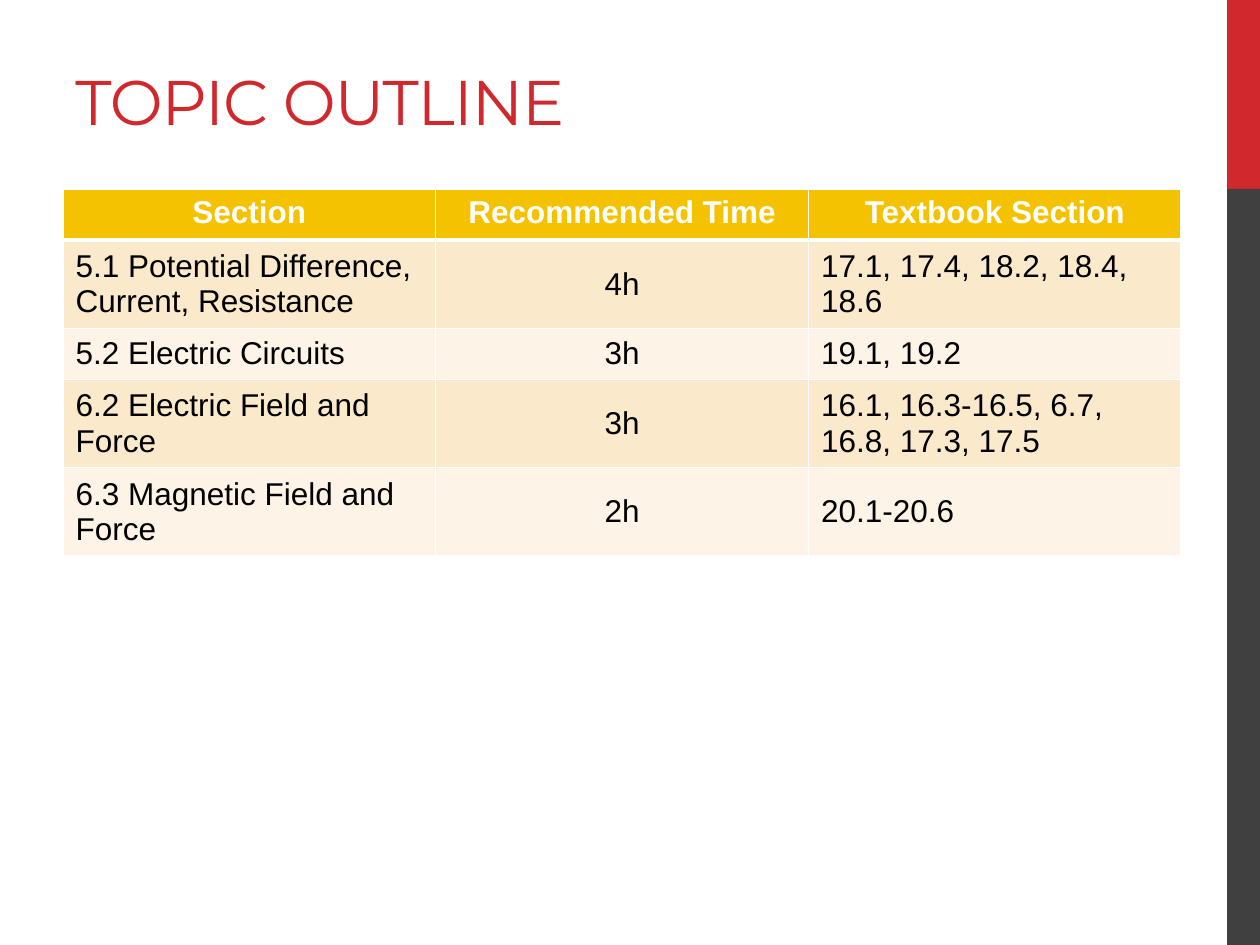
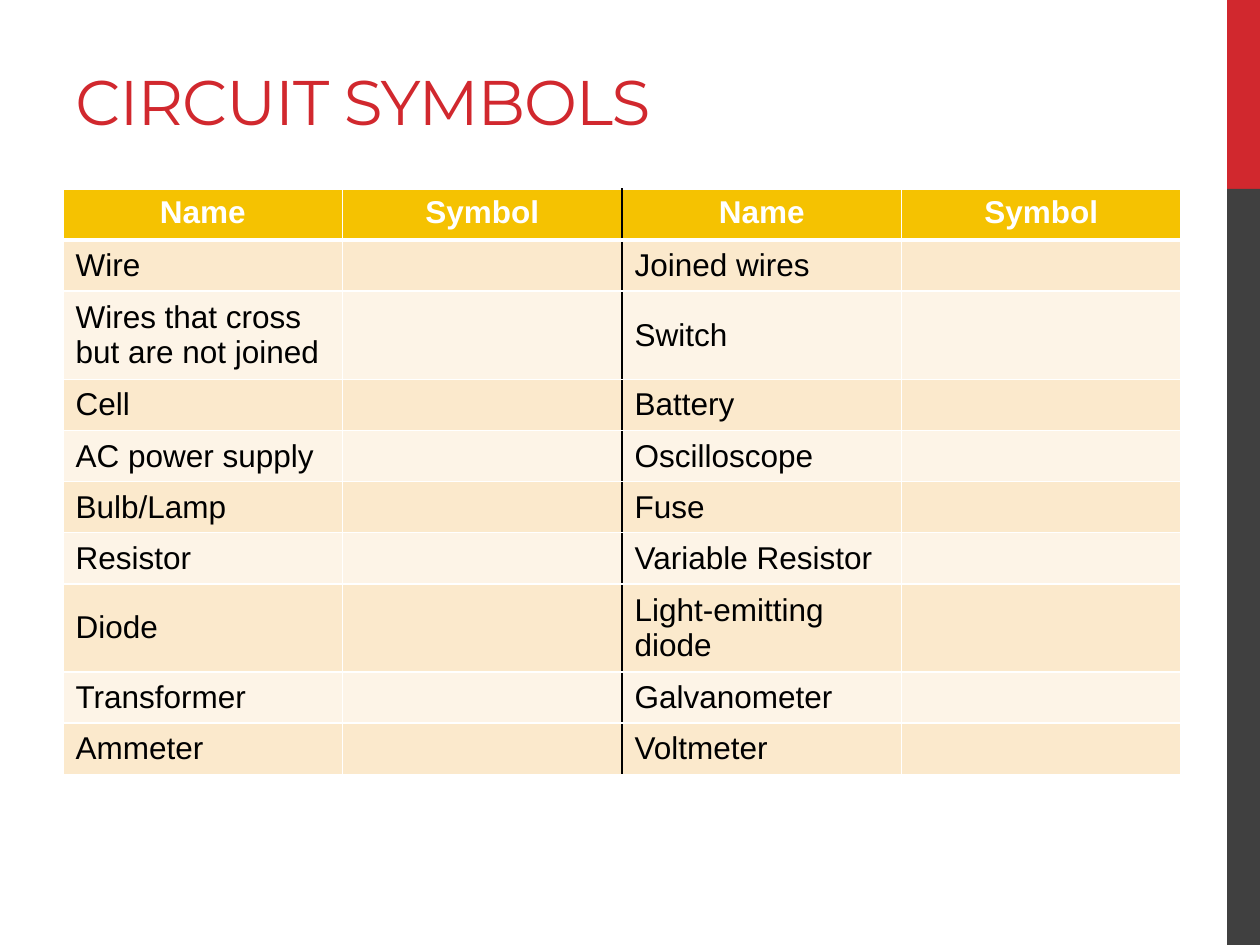
"""Build two physics slides: a topic outline and a circuit symbol worksheet."""
import dataclasses

import lxml.etree
import pptx
import pptx.dml.color
import pptx.enum.shapes
import pptx.enum.text
import pptx.oxml.ns
import pptx.util

Pt = pptx.util.Pt
ALIGN = pptx.enum.text.PP_ALIGN
ANCHOR = pptx.enum.text.MSO_ANCHOR


@dataclasses.dataclass(frozen=True)
class Theme:
    """Colours, fonts, type sizes and shared measures in points."""
    accent: str = "D1282E"
    dark: str = "404040"
    header: str = "F5C201"
    bands: tuple = ("FBE9CC", "FDF4E7")
    white: str = "FFFFFF"
    black: str = "000000"
    title_font: str = "Montserrat"
    body_font: str = "Arial"
    title_size: float = 36
    body_size: float = 18
    title_spacing: float = -0.6
    width: float = 720
    height: float = 540
    margin: float = 36
    content_width: float = 639
    content_top: float = 108
    band_width: float = 18.72
    row_height: float = 29.2
    border: float = 1
    header_rule: float = 3


THEME = Theme()

TOPICS = [
    ("Section", "Recommended Time", "Textbook Section"),
    ("5.1 Potential Difference, Current, Resistance", "4h", "17.1, 17.4, 18.2, 18.4, 18.6"),
    ("5.2 Electric Circuits", "3h", "19.1, 19.2"),
    ("6.2 Electric Field and Force", "3h", "16.1, 16.3-16.5, 6.7, 16.8, 17.3, 17.5"),
    ("6.3 Magnetic Field and Force", "2h", "20.1-20.6"),
]

COMPONENT_PAIRS = [
    ("Wire", "Joined wires"),
    ("Wires that cross but are not joined", "Switch"),
    ("Cell", "Battery"),
    ("AC power supply", "Oscilloscope"),
    ("Bulb/Lamp", "Fuse"),
    ("Resistor", "Variable Resistor"),
    ("Diode", "Light-emitting diode"),
    ("Transformer", "Galvanometer"),
    ("Ammeter", "Voltmeter"),
]


def rgb(colour):
    """Return the colour object for a hex string."""
    return pptx.dml.color.RGBColor.from_string(colour)


def add_run(p, text, font, size, colour, bold=False):
    """Add one formatted run to a paragraph."""
    r = p.add_run()
    r.text = text
    r.font.name = font
    r.font.size = Pt(size)
    r.font.bold = bold
    r.font.color.rgb = rgb(colour)
    return r


def add_band(s, top, height, colour):
    """Add one block of the band along the right edge."""
    sp = s.shapes.add_shape(
        pptx.enum.shapes.MSO_SHAPE.RECTANGLE, Pt(THEME.width - THEME.band_width),
        Pt(top), Pt(THEME.band_width), Pt(height))
    sp.shadow.inherit = False
    sp.fill.solid()
    sp.fill.fore_color.rgb = rgb(colour)
    sp.line.fill.background()


def add_title(s, text):
    """Add the slide title, resting on the bottom of its box."""
    sp = s.shapes.add_textbox(Pt(THEME.margin), Pt(11.7), Pt(THEME.content_width), Pt(70.5))
    tf = sp.text_frame
    tf.word_wrap = True
    tf.vertical_anchor = ANCHOR.BOTTOM
    r = add_run(tf.paragraphs[0], text, THEME.title_font, THEME.title_size, THEME.accent)
    r.font._element.set("spc", str(round(THEME.title_spacing * 100)))


def add_slide(prs, title):
    """Add a blank slide with the side band and a title."""
    s = prs.slides.add_slide(prs.slide_layouts[6])
    add_band(s, 0, THEME.content_top, THEME.accent)
    add_band(s, THEME.content_top, THEME.height - THEME.content_top, THEME.dark)
    add_title(s, title)
    return s


def set_border(cell, side, colour, width):
    """Draw one side (L, R, T or B) of a cell."""
    qn = pptx.oxml.ns.qn
    ln = lxml.etree.SubElement(cell._tc.get_or_add_tcPr(), qn(f"a:ln{side}"), w=str(Pt(width)))
    fill = lxml.etree.SubElement(ln, qn("a:solidFill"))
    lxml.etree.SubElement(fill, qn("a:srgbClr"), val=colour)


def style_cell(cell, text, row, col, centred, divider):
    """Give a cell its borders, fill and text."""
    is_header = row == 0
    set_border(cell, "L", THEME.black if col == divider else THEME.white, THEME.border)
    set_border(cell, "R", THEME.black if col + 1 == divider else THEME.white, THEME.border)
    set_border(cell, "T", THEME.white, THEME.header_rule if row == 1 else THEME.border)
    set_border(cell, "B", THEME.white, THEME.header_rule if is_header else THEME.border)
    cell.fill.solid()
    cell.fill.fore_color.rgb = rgb(THEME.header if is_header else THEME.bands[(row - 1) % 2])
    cell.vertical_anchor = ANCHOR.TOP if is_header else ANCHOR.MIDDLE
    p = cell.text_frame.paragraphs[0]
    p.font.size = Pt(THEME.body_size)
    p.alignment = ALIGN.CENTER if is_header or col in centred else ALIGN.LEFT
    if text:
        add_run(p, text, THEME.body_font, THEME.body_size,
                THEME.white if is_header else THEME.black, is_header)


def add_grid(s, rows, centred=(), divider=None):
    """Add a banded table; a black line stands left of the divider column."""
    table = s.shapes.add_table(
        len(rows), len(rows[0]), Pt(THEME.margin), Pt(THEME.content_top),
        Pt(THEME.content_width), Pt(len(rows) * THEME.row_height)).table
    for i, texts in enumerate(rows):
        for j, text in enumerate(texts):
            style_cell(table.cell(i, j), text, i, j, centred, divider)


def main():
    """Build both slides and save the presentation."""
    prs = pptx.Presentation()
    prs.slide_width, prs.slide_height = Pt(THEME.width), Pt(THEME.height)

    add_grid(add_slide(prs, "TOPIC OUTLINE"), TOPICS, centred=(1,))

    symbols = [("Name", "Symbol") * 2]
    symbols += [(left, "", right, "") for left, right in COMPONENT_PAIRS]
    add_grid(add_slide(prs, "CIRCUIT SYMBOLS"), symbols, divider=2)

    prs.save("out.pptx")


if __name__ == "__main__":
    main()
